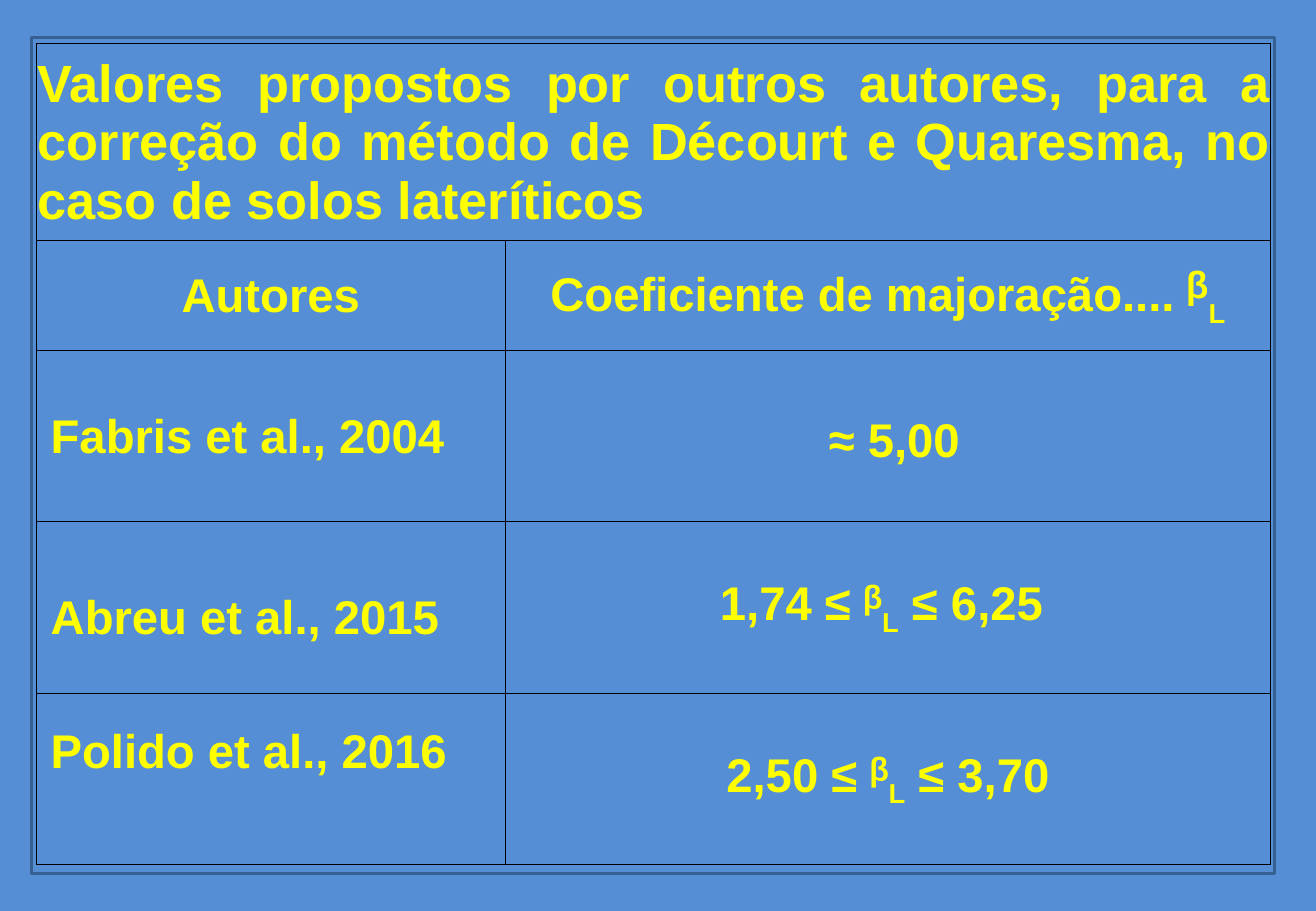
from lxml.etree import SubElement
from pptx import Presentation
from pptx.dml.color import RGBColor
from pptx.enum.shapes import MSO_SHAPE
from pptx.enum.text import MSO_ANCHOR, PP_ALIGN
from pptx.oxml.ns import qn
from pptx.util import Cm, Pt

INSET = 0.03
BLANK_LINE = 1.14
WORD_GAP = 0.3


def color(hex_value):
    return RGBColor.from_string(hex_value)


def write(frame, runs, size=28, font="Arial", ink="FFFF00", bold=True,
          align=PP_ALIGN.LEFT):
    """Fill one paragraph with (text, format) runs; format may hold size and baseline."""
    paragraph = frame.paragraphs[0]
    paragraph.alignment = align
    for text, run_format in runs:
        run = paragraph.add_run()
        run.text = text
        run.font.size = Pt(run_format.get("size", size))
        run.font.name = font
        run.font.bold = bold
        run.font.color.rgb = color(ink)
        if "baseline" in run_format:
            run.font._element.set("baseline", str(run_format["baseline"] * 1000))


def beta(before, after="", size=28):
    """Runs for the coefficient with its lowered index L."""
    runs = [(before, {}), ("ᵝ", {"size": size}), ("L", {"baseline": -25})]
    return runs + [(after, {})] if after else runs


class SlideBuilder:
    def __init__(self, presentation, background, border):
        self.slide = presentation.slides.add_slide(presentation.slide_layouts[6])
        self.slide.background.fill.solid()
        self.slide.background.fill.fore_color.rgb = color(background)
        self.border = border

    def frame(self, left, top, width, height, line, weight):
        frame = self.slide.shapes.add_shape(
            MSO_SHAPE.RECTANGLE, Cm(left), Cm(top), Cm(width), Cm(height))
        frame.shadow.inherit = False
        frame.fill.background()
        frame.line.color.rgb = color(line)
        frame.line.width = Pt(weight)

    def table(self, left, top, widths, heights):
        table = self.slide.shapes.add_table(
            len(heights), len(widths), Cm(left), Cm(top),
            Cm(sum(widths)), Cm(sum(heights))).table
        table.first_row = table.horz_banding = False
        for column, width in zip(table.columns, widths):
            column.width = Cm(width)
        for row, height in zip(table.rows, heights):
            row.height = Cm(height)
        for cell in table.iter_cells():
            self.outline(cell)
            cell.fill.background()
        return table

    def outline(self, cell):
        properties = cell._tc.get_or_add_tcPr()
        for side in ("a:lnL", "a:lnR", "a:lnT", "a:lnB"):
            line = SubElement(properties, qn(side), w=str(Pt(0.5)))
            fill = SubElement(line, qn("a:solidFill"))
            SubElement(fill, qn("a:srgbClr"), val=self.border)

    def cell(self, cell, runs, anchor=MSO_ANCHOR.MIDDLE, left=INSET, right=INSET,
             top=INSET, bottom=0, **text_format):
        cell.vertical_anchor = anchor
        cell.margin_left, cell.margin_right = Cm(left), Cm(right)
        cell.margin_top, cell.margin_bottom = Cm(top), Cm(bottom)
        write(cell.text_frame, runs, **text_format)


def main():
    presentation = Presentation()
    presentation.slide_width, presentation.slide_height = Cm(27.51), Cm(19.05)
    builder = SlideBuilder(presentation, background="558ED5", border="000000")
    builder.frame(0.66, 0.79, 25.98, 17.48, line="376092", weight=1.5)

    coefficients = builder.table(0.76, 0.91, [9.8, 16], [4.11, 2.31] + [3.58] * 3)
    heading = coefficients.cell(0, 0)
    heading.merge(coefficients.cell(0, 1))
    builder.cell(heading, [(
        "Valores propostos por outros autores, para a correção do método de "
        "Décourt e Quaresma, no caso de solos lateríticos", {})],
        size=31, align=PP_ALIGN.JUSTIFY)
    builder.cell(coefficients.cell(1, 0), [("Autores", {})], align=PP_ALIGN.CENTER)
    builder.cell(coefficients.cell(1, 1), beta("Coeficiente de majoração.... ", size=32),
                 align=PP_ALIGN.CENTER)

    studies = [
        ("Fabris et al., 2004", {}, [("≈ 5,00", {})], {"left": WORD_GAP}),
        ("Abreu et al., 2015", {"top": 0.45}, beta("1,74 ≤ ", " ≤ 6,25"),
         {"right": WORD_GAP}),
        ("Polido et al., 2016", {"bottom": BLANK_LINE}, beta("2,50 ≤ ", " ≤ 3,70"), {}),
    ]
    for row, (authors, author_margins, value, value_margins) in enumerate(studies, 2):
        builder.cell(coefficients.cell(row, 0), [(authors, {})], left=WORD_GAP,
                     **author_margins)
        builder.cell(coefficients.cell(row, 1), value, anchor=MSO_ANCHOR.BOTTOM,
                     bottom=BLANK_LINE, align=PP_ALIGN.CENTER, **value_margins)

    presentation.save("out.pptx")


if __name__ == "__main__":
    main()
